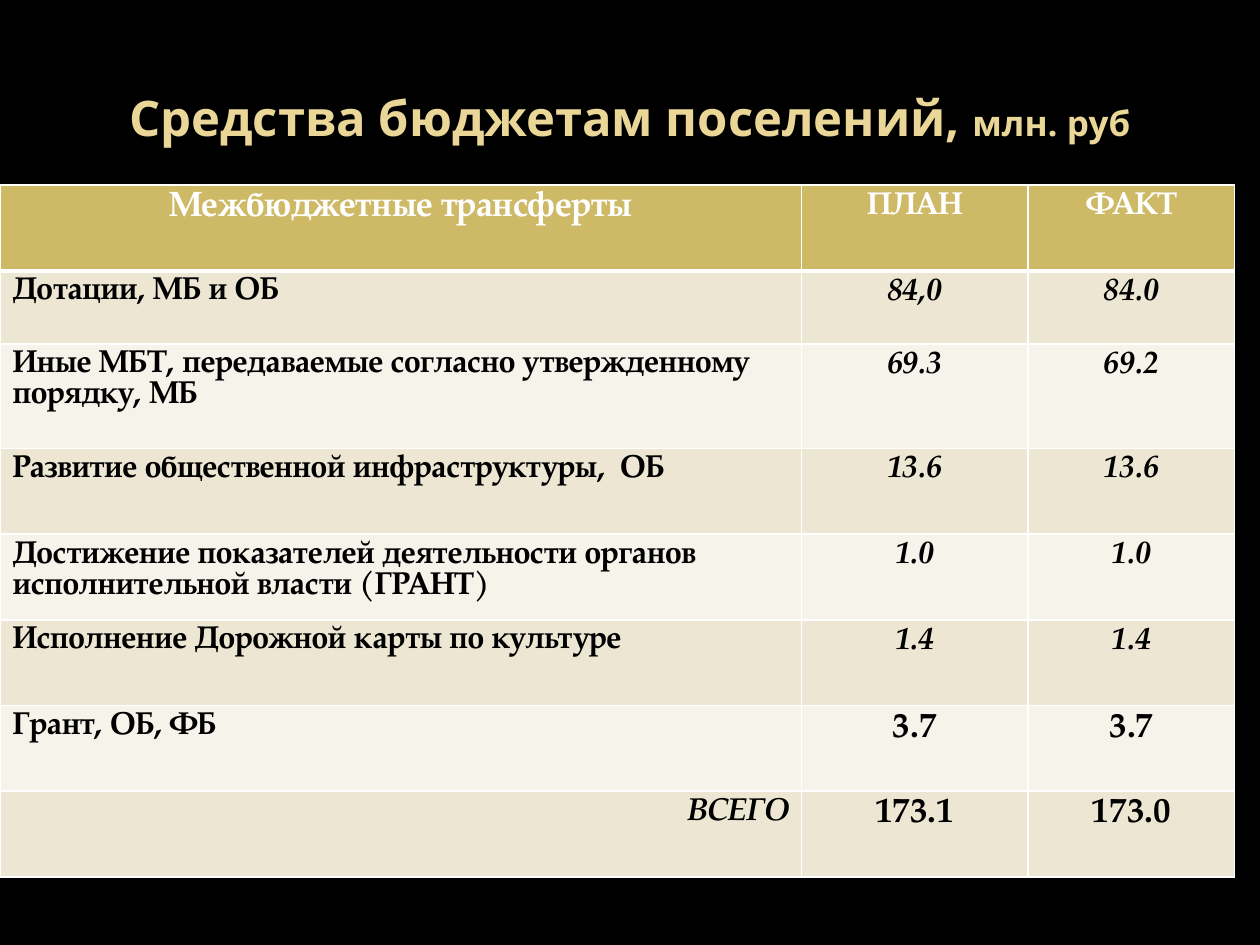
from pptx import Presentation
from pptx.dml.color import RGBColor
from pptx.enum.text import MSO_ANCHOR as Anchor, PP_ALIGN as Align
from pptx.oxml import parse_xml
from pptx.oxml.ns import nsdecls
from pptx.util import Inches, Pt

COLORS = {
    "background": "000000",
    "title": "EAD696",
    "header": "CEB966",
    "band_dark": "EDE6D3",
    "band_light": "F6F3EA",
    "white": "FFFFFF",
    "black": "000000",
}
TITLE_FONT = "Open Sans"
TABLE_FONT = "TeX Gyre Pagella"

HEADER = ("Межбюджетные трансферты", "ПЛАН", "ФАКТ")
TRANSFERS = [
    ("Дотации, МБ и ОБ", "84,0", "84.0"),
    ("Иные МБТ, передаваемые согласно утвержденному порядку, МБ", "69.3", "69.2"),
    ("Развитие общественной инфраструктуры,  ОБ", "13.6", "13.6"),
    ("Достижение показателей деятельности органов исполнительной власти (ГРАНТ)",
     "1.0", "1.0"),
    ("Исполнение Дорожной карты по культуре", "1.4", "1.4"),
    ("Грант, ОБ, ФБ", "3.7", "3.7"),
    ("ВСЕГО", "173.1", "173.0"),
]
COLUMN_WIDTHS = (6.36, 1.8, 1.64)
ROW_HEIGHTS = (0.68, 0.58, 0.83) + (0.68,) * 5


class SlideBuilder:
    """Holds the style and the current slide."""

    def __init__(self, presentation):
        self.slide = presentation.slides.add_slide(presentation.slide_layouts[5])
        fill = self.slide.background.fill
        fill.solid()
        fill.fore_color.rgb = self.color("background")

    def color(self, name):
        return RGBColor.from_string(COLORS[name])

    def run(self, paragraph, text, color, **formats):
        run = paragraph.add_run()
        run.text = text
        run.font.color.rgb = self.color(color)
        for name, value in formats.items():
            setattr(run.font, name, value)

    def title(self, parts, left, top, width, height):
        shape = self.slide.shapes.title
        box = {"left": left, "top": top, "width": width, "height": height}
        for name, value in box.items():
            setattr(shape, name, Inches(value))
        shape.text_frame.vertical_anchor = Anchor.MIDDLE
        paragraph = shape.text_frame.paragraphs[0]
        paragraph.alignment = Align.CENTER
        for text, size in parts:
            self.run(paragraph, text, "title", name=TITLE_FONT, size=Pt(size), bold=True)

    def table(self, left, top, column_widths, row_heights):
        table = self.slide.shapes.add_table(
            len(row_heights), len(column_widths), Inches(left), Inches(top),
            Inches(sum(column_widths)), Inches(sum(row_heights))).table
        for column, width in zip(table.columns, column_widths):
            column.width = Inches(width)
        for row, height in zip(table.rows, row_heights):
            row.height = Inches(height)
        return table

    def cell(self, cell, text, fill, color, size, align, italic=False, bottom=1):
        cell_properties = cell._tc.get_or_add_tcPr()
        for side, width in (("L", 1), ("R", 1), ("T", 1), ("B", bottom)):
            cell_properties.append(parse_xml(
                f'<a:ln{side} {nsdecls("a")} w="{Pt(width)}"><a:solidFill>'
                f'<a:srgbClr val="{COLORS["white"]}"/></a:solidFill></a:ln{side}>'))
        cell.fill.solid()
        cell.fill.fore_color.rgb = self.color(fill)
        paragraph = cell.text_frame.paragraphs[0]
        paragraph.alignment = align
        self.run(paragraph, text, color, name=TABLE_FONT, size=Pt(size),
                 bold=True, italic=italic)


def main():
    presentation = Presentation()
    presentation.slide_width = Inches(10)
    presentation.slide_height = Inches(7.5)
    builder = SlideBuilder(presentation)

    # Title
    builder.title([("Средства бюджетам поселений, ", 28), ("млн. руб", 20)],
                  0.5, 0.3, 9, 1.25)

    # Table header
    table = builder.table(0, 1.47, COLUMN_WIDTHS, ROW_HEIGHTS)
    for column, text in enumerate(HEADER):
        builder.cell(table.cell(0, column), text, "header", "white",
                     18 if column else 20, Align.CENTER, bottom=3)

    # Transfers, with the total in the last row
    total_row = len(TRANSFERS)
    for row, values in enumerate(TRANSFERS, 1):
        fill = "band_dark" if row % 2 else "band_light"
        large = row >= total_row - 1
        for column, text in enumerate(values):
            if column:
                size, align, italic = 20 if large else 18, Align.CENTER, not large
            else:
                is_total = row == total_row
                size, align, italic = 18, Align.RIGHT if is_total else Align.LEFT, is_total
            builder.cell(table.cell(row, column), text, fill, "black", size, align, italic)

    presentation.save("out.pptx")


if __name__ == "__main__":
    main()
